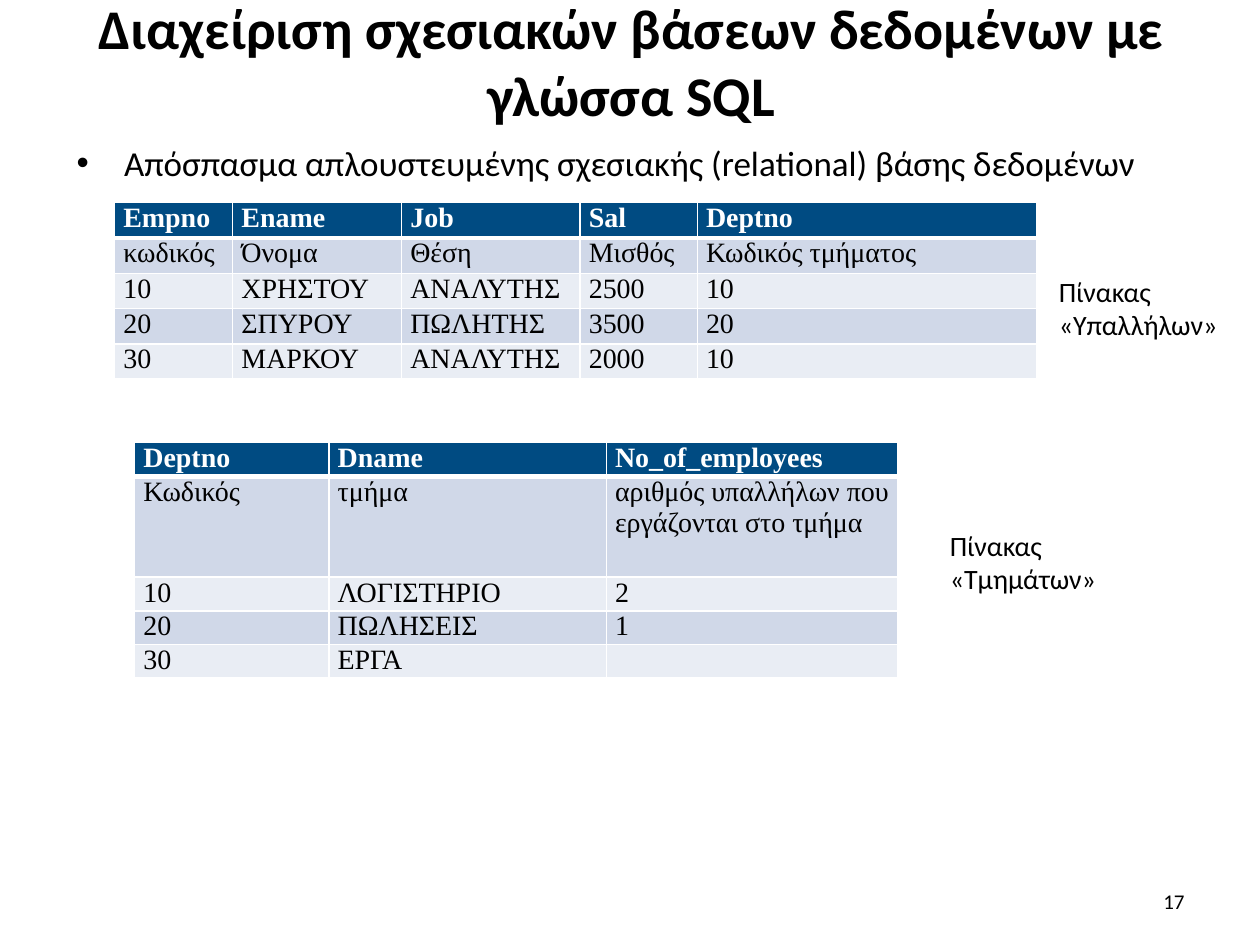
from lxml.etree import SubElement
from pptx import Presentation
from pptx.dml.color import RGBColor
from pptx.enum.text import MSO_ANCHOR, PP_ALIGN
from pptx.oxml.ns import qn
from pptx.util import Pt

STAFF = [
    ["Empno", "Ename", "Job", "Sal", "Deptno"],
    ["κωδικός", "Όνομα", "Θέση", "Μισθός", "Κωδικός τμήματος"],
    ["10", "ΧΡΗΣΤΟΥ", "ΑΝΑΛΥΤΗΣ", "2500", "10"],
    ["20", "ΣΠΥΡΟΥ", "ΠΩΛΗΤΗΣ", "3500", "20"],
    ["30", "ΜΑΡΚΟΥ", "ΑΝΑΛΥΤΗΣ", "2000", "10"],
]
DEPTS = [
    ["Deptno", "Dname", "No_of_employees"],
    ["Κωδικός", "τμήμα", "αριθμός υπαλλήλων που εργάζονται στο τμήμα"],
    ["10", "ΛΟΓΙΣΤΗΡΙΟ", "2"],
    ["20", "ΠΩΛΗΣΕΙΣ", "1"],
    ["30", "ΕΡΓΑ", ""],
]


def color(code):
    return RGBColor.from_string(code)


def style(para, size, face="Calibri", code="000000", bold=False):
    for run in para.runs:
        font = run.font
        font.size, font.name, font.bold = Pt(size), face, bold
        font.color.rgb = color(code)


def add_text(slide, text, box, size, align=PP_ALIGN.LEFT,
             anchor=MSO_ANCHOR.TOP, bold=False):
    frame = slide.shapes.add_textbox(*map(Pt, box)).text_frame
    frame.word_wrap = True
    frame.vertical_anchor = anchor
    frame.text = text
    para = frame.paragraphs[0]
    para.alignment = align
    style(para, size, bold=bold)
    return para


def add_bullet(para, indent):
    props = para._p.get_or_add_pPr()
    props.set("marL", str(Pt(indent)))
    props.set("indent", str(-Pt(indent)))
    SubElement(props, qn("a:buFont"), typeface="Arial")
    SubElement(props, qn("a:buChar"), char="•")


def add_lines(cell, base):
    props = cell._tc.get_or_add_tcPr()
    for side, width in zip("LRTB", (1, 1, 1, base)):
        line = SubElement(props, qn(f"a:ln{side}"), w=str(Pt(width)))
        fill = SubElement(line, qn("a:solidFill"))
        SubElement(fill, qn("a:srgbClr"), val="FFFFFF")


def fill_cell(cell, text, row):
    head = row == 0
    add_lines(cell, 3 if head else 1)
    cell.fill.solid()
    cell.fill.fore_color.rgb = color(
        "004B82" if head else ("E9EDF4", "D0D8E8")[row % 2])
    cell.margin_left = cell.margin_right = Pt(5)
    cell.margin_top = cell.margin_bottom = 0
    cell.text_frame.text = text
    para = cell.text_frame.paragraphs[0]
    style(para, 16, "Times New Roman", "FFFFFF" if head else "000000", head)
    if not text:
        para._p.get_or_add_endParaRPr().set("sz", "1400")


def add_grid(slide, data, left, top, widths, heights):
    box = map(Pt, (left, top, sum(widths), sum(heights)))
    table = slide.shapes.add_table(len(data), len(widths), *box).table
    for col, width in zip(table.columns, widths):
        col.width = Pt(width)
    for row, height in zip(table.rows, heights):
        row.height = Pt(height)
    for r, texts in enumerate(data):
        for c, text in enumerate(texts):
            fill_cell(table.cell(r, c), text, r)


def main():
    deck = Presentation()
    deck.slide_width, deck.slide_height = Pt(720), Pt(540)
    slide = deck.slides.add_slide(deck.slide_layouts[6])
    add_text(slide, "Διαχείριση σχεσιακών βάσεων δεδομένων με γλώσσα SQL",
             (36.8, 9.2, 648, 51), 32, PP_ALIGN.CENTER, MSO_ANCHOR.MIDDLE, True)
    intro = add_text(
        slide, "Απόσπασμα απλουστευμένης σχεσιακής (relational) βάσης δεδομένων",
        (36.8, 77.3, 648, 34), 20, PP_ALIGN.JUSTIFY)
    add_bullet(intro, 27)
    add_text(slide, "Πίνακας «Υπαλλήλων»", (598, 153.2, 122, 46), 16)
    add_text(slide, "Πίνακας «Τμημάτων»", (535.7, 298.2, 112, 46), 16)
    add_grid(slide, DEPTS, 77, 253, [111, 158.5, 166.5],
             [19.2, 57.6, 19.2, 19.2, 19.2])
    add_grid(slide, STAFF, 65.5, 115.8, [67.5, 96.5, 102, 67, 194], [20.2] * 5)
    add_text(slide, "17", (516, 500.5, 168, 29), 12, PP_ALIGN.RIGHT,
             MSO_ANCHOR.MIDDLE)
    deck.save("out.pptx")


if __name__ == "__main__":
    main()
